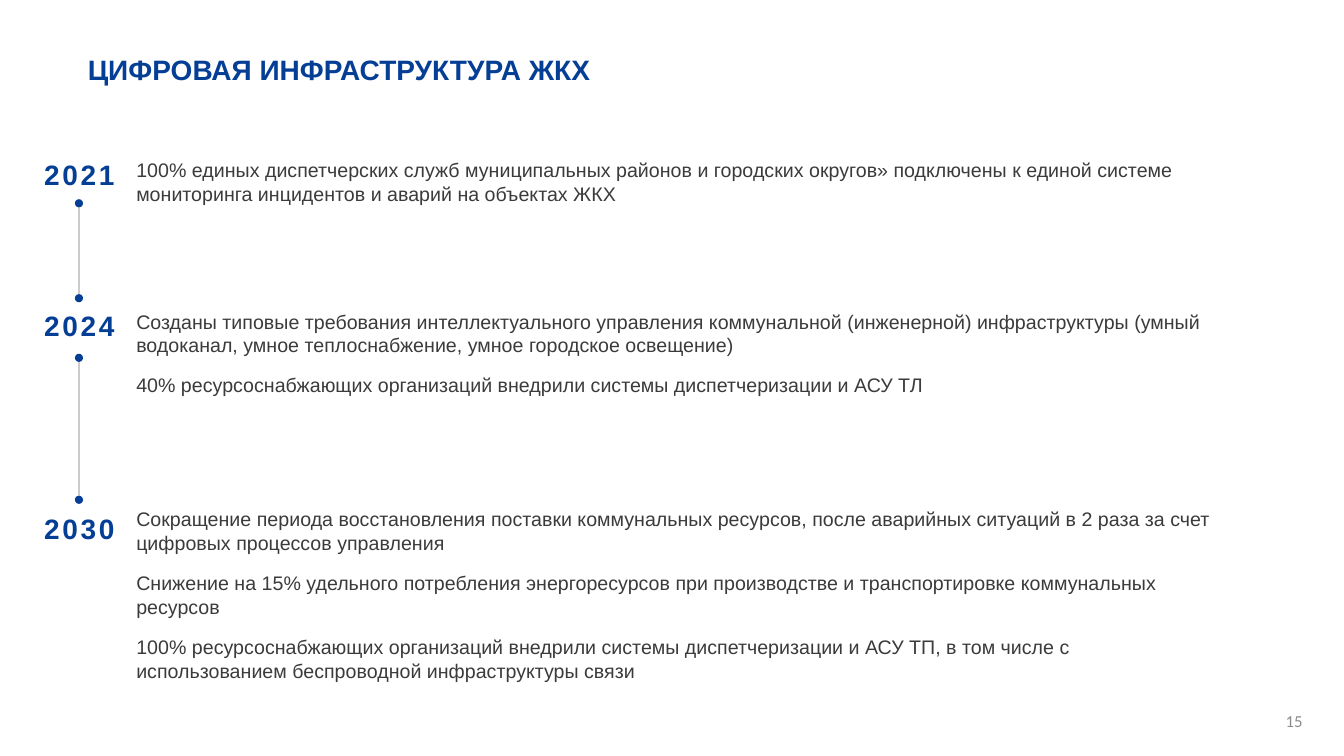
from pptx import Presentation
from pptx.dml.color import RGBColor
from pptx.enum.shapes import MSO_CONNECTOR, MSO_SHAPE
from pptx.enum.text import MSO_ANCHOR, PP_ALIGN
from pptx.util import Pt
from lxml.etree import SubElement
from pptx.oxml.ns import qn

BLUE, TEXT, GRAY, RULE, WHITE = "053E95", "3B3B3B", "8C8C8C", "CCCCCC", "FFFFFF"
YEAR_W, YEAR_H, DOT = 81.4, 39, 5.8

STAGES = [
    ("2021", 106.5, 107.3, 831.6, [
        "100% единых диспетчерских служб муниципальных районов и городских округов» "
        "подключены к единой системе мониторинга инцидентов и аварий на объектах ЖКХ",
    ]),
    ("2024", 214.5, 215.3, 802, [
        "Созданы типовые требования интеллектуального управления коммунальной (инженерной) "
        "инфраструктуры (умный водоканал, умное теплоснабжение, умное городское освещение)",
        "40% ресурсоснабжающих организаций внедрили системы диспетчеризации и АСУ ТЛ",
    ]),
    ("2030", 359.5, 356.5, 782, [
        "Сокращение периода восстановления поставки коммунальных ресурсов, после аварийных "
        "ситуаций в 2 раза за счет цифровых процессов управления",
        "Снижение на 15% удельного потребления энергоресурсов при производстве и "
        "транспортировке коммунальных ресурсов",
        "100% ресурсоснабжающих организаций внедрили системы диспетчеризации и АСУ ТП, "
        "в том числе с использованием беспроводной инфраструктуры связи",
    ]),
]
DOT_CENTERS = [145.2, 213, 255.6, 357]


def rgb(value):
    return RGBColor.from_string(value)


def place(sp, x, y, w, h):
    sp.left, sp.top, sp.width, sp.height = Pt(x), Pt(y), Pt(w), Pt(h)


def add_run(p, text, size, color, bold=False, font="Arial"):
    r = p.add_run()
    r.text = text
    r.font.name, r.font.size, r.font.bold = font, Pt(size), bold
    r.font.color.rgb = rgb(color)
    return r


def set_insets(tf, inset):
    tf.margin_left = tf.margin_right = tf.margin_top = tf.margin_bottom = Pt(inset)


def add_filled(s, kind, x, y, w, h, color):
    sp = s.shapes.add_shape(kind, Pt(x), Pt(y), Pt(w), Pt(h))
    sp.shadow.inherit = False
    sp.fill.solid()
    sp.fill.fore_color.rgb = rgb(color)
    sp.line.fill.background()
    return sp


def add_title(s, x, y, w, h):
    sp = s.shapes.title
    place(sp, x, y, w, h)
    tf = sp.text_frame
    tf.word_wrap = True
    tf.vertical_anchor = MSO_ANCHOR.MIDDLE
    p = tf.paragraphs[0]
    p.alignment, p.line_spacing = PP_ALIGN.LEFT, 0.9
    add_run(p, "ЦИФРОВАЯ ИНФРАСТРУКТУРА ЖКХ", 20, BLUE, True)


def add_spine(s, x, top, bottom):
    line = s.shapes.add_connector(MSO_CONNECTOR.STRAIGHT, Pt(x), Pt(top), Pt(x), Pt(bottom))
    line.line.color.rgb = rgb(RULE)
    line.line.width = Pt(1)
    SubElement(line._element.spPr, qn("a:effectLst"))


def add_year(s, year, x, y, w, h):
    sp = add_filled(s, MSO_SHAPE.RECTANGLE, x, y, w, h, WHITE)
    tf = sp.text_frame
    set_insets(tf, 5.76)
    tf.vertical_anchor = MSO_ANCHOR.MIDDLE
    p = tf.paragraphs[0]
    p.alignment, p.line_spacing = PP_ALIGN.CENTER, 0.9
    r = add_run(p, year, 20, BLUE, True)
    r.font._element.set("spc", "190")


def add_goals(s, goals, x, y, w, h):
    tf = s.shapes.add_textbox(Pt(x), Pt(y), Pt(w), Pt(h)).text_frame
    tf.word_wrap = True
    set_insets(tf, 5.76)
    for i, goal in enumerate(goals):
        p = tf.add_paragraph() if i else tf.paragraphs[0]
        p.space_before = p.space_after = Pt(6)
        add_run(p, goal, 14, TEXT)


def add_timeline(s, x):
    axis = x + YEAR_W / 2 - 0.3
    add_spine(s, axis, DOT_CENTERS[0], DOT_CENTERS[-1])
    for year, year_top, goals_top, goals_w, goals in STAGES:
        add_year(s, year, x, year_top, YEAR_W, YEAR_H)
        add_goals(s, goals, x + 75.6, goals_top, goals_w, 45.5 * len(goals))
    for center in DOT_CENTERS:
        add_filled(s, MSO_SHAPE.OVAL, axis - DOT / 2, center - DOT / 2, DOT, DOT, BLUE)


def add_page_number(s, x, y, w, h):
    tf = s.shapes.add_textbox(Pt(x), Pt(y), Pt(w), Pt(h)).text_frame
    tf.word_wrap = True
    tf.vertical_anchor = MSO_ANCHOR.MIDDLE
    p = tf.paragraphs[0]
    p.alignment = PP_ALIGN.RIGHT
    add_run(p, "15", 12, GRAY, font="Calibri")


def main():
    prs = Presentation()
    prs.slide_width, prs.slide_height = Pt(960), Pt(540)
    s = prs.slides.add_slide(prs.slide_layouts[5])
    add_title(s, 55.5, 31.5, 395.5, 39)
    add_timeline(s, 16)
    add_page_number(s, 721.5, 500.5, 216, 28.8)
    prs.save("out.pptx")


if __name__ == "__main__":
    main()
